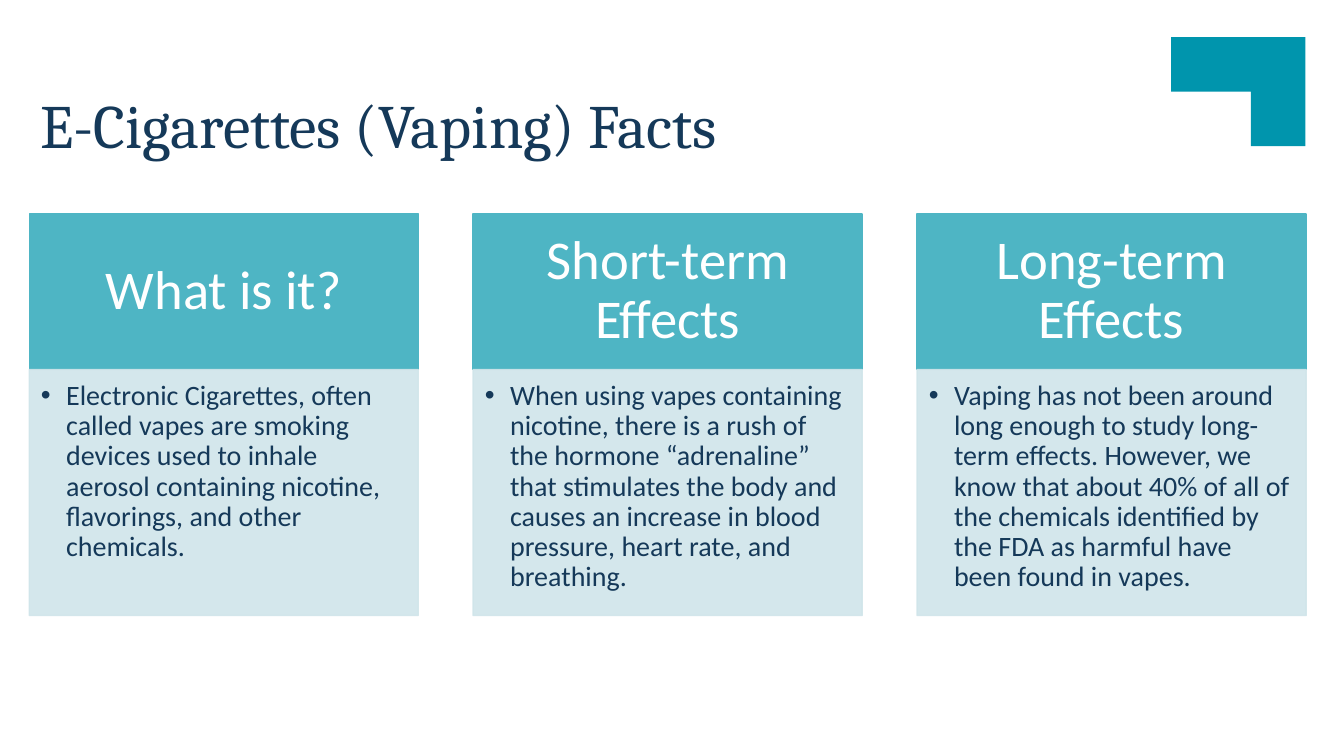
from dataclasses import dataclass

from lxml.etree import SubElement
from pptx import Presentation
from pptx.dml.color import RGBColor
from pptx.dml.fill import FillFormat
from pptx.enum.shapes import MSO_SHAPE
from pptx.enum.text import MSO_ANCHOR, PP_ALIGN
from pptx.oxml.ns import qn
from pptx.slide import Slide
from pptx.text.text import TextFrame, _Paragraph
from pptx.util import Pt

NAVY = RGBColor(0x15, 0x39, 0x59)
DEEP_TEAL = RGBColor(0x00, 0x95, 0xAD)
TEAL = RGBColor(0x4E, 0xB5, 0xC4)
PALE_TEAL = RGBColor(0xD0, 0xE5, 0xEA)
WHITE = RGBColor(0xFF, 0xFF, 0xFF)

COLUMN_LEFT, COLUMN_STEP, COLUMN_WIDTH = 20.9, 317.1, 277.9
HEADING_TOP, HEADING_HEIGHT = 152.8, 111.2
FACT_HEIGHT = 175.7
BULLET_INDENT = 18


@dataclass(frozen=True)
class Style:
    fill: RGBColor
    opacity: int
    font: str
    size: float
    color: RGBColor
    align: PP_ALIGN
    anchor: MSO_ANCHOR
    insets: tuple[float, float, float, float]
    bulleted: bool = False


@dataclass(frozen=True)
class Column:
    heading: str
    fact: str


HEADING = Style(TEAL, 100, "Calibri", 39, WHITE, PP_ALIGN.CENTER,
                MSO_ANCHOR.MIDDLE, (21.8, 12.5, 21.8, 12.5))
FACT = Style(PALE_TEAL, 90, "Calibri", 20, NAVY, PP_ALIGN.LEFT,
             MSO_ANCHOR.TOP, (8.4, 8.4, 11.2, 12.6), bulleted=True)

COLUMNS = (
    Column("What is it?",
           "Electronic Cigarettes, often called vapes are smoking devices used to "
           "inhale aerosol containing nicotine, flavorings, and other chemicals."),
    Column("Short-term Effects",
           "When using vapes containing nicotine, there is a rush of the hormone "
           "“adrenaline” that stimulates the body and causes an increase in blood "
           "pressure, heart rate, and breathing."),
    Column("Long-term Effects",
           "Vaping has not been around long enough to study long-term effects. "
           "However, we know that about 40% of all of the chemicals identified by "
           "the FDA as harmful have been found in vapes."),
)


def paint(fill: FillFormat, color: RGBColor, opacity: int) -> None:
    fill.solid()
    fill.fore_color.rgb = color
    if opacity < 100:
        color_element = fill._xPr.find(qn("a:solidFill"))[0]
        SubElement(color_element, qn("a:alpha"), val=str(opacity * 1000))


def add_bullet(paragraph: _Paragraph) -> None:
    properties = paragraph._p.get_or_add_pPr()
    properties.set("marL", str(Pt(BULLET_INDENT)))
    properties.set("indent", str(-Pt(BULLET_INDENT)))
    SubElement(properties, qn("a:buFont"), typeface="Arial")
    SubElement(properties, qn("a:buChar"), char="•")


def write(frame: TextFrame, text: str, font: str, size: float, color: RGBColor,
          align: PP_ALIGN, bulleted: bool = False) -> None:
    frame.word_wrap = True
    frame.text = text
    paragraph = frame.paragraphs[0]
    if bulleted:
        paragraph.level = 1
        add_bullet(paragraph)
    paragraph.alignment = align
    paragraph.line_spacing = 0.9
    for name, value in {"name": font, "size": Pt(size)}.items():
        setattr(paragraph.font, name, value)
    paragraph.font.color.rgb = color


def add_panel(slide: Slide, left: float, top: float, height: float,
              text: str, style: Style) -> None:
    panel = slide.shapes.add_shape(MSO_SHAPE.RECTANGLE, Pt(left), Pt(top),
                                   Pt(COLUMN_WIDTH), Pt(height))
    panel.shadow.inherit = False
    paint(panel.fill, style.fill, style.opacity)
    paint(panel.line.fill, style.fill, style.opacity)
    panel.line.width = Pt(1)
    frame = panel.text_frame
    write(frame, text, style.font, style.size, style.color, style.align, style.bulleted)
    frame.vertical_anchor = style.anchor
    for side, inset in zip(("left", "top", "right", "bottom"), style.insets):
        setattr(frame, f"margin_{side}", Pt(inset))


def add_corner(slide: Slide) -> None:
    corner = slide.shapes.add_shape(MSO_SHAPE.CORNER, Pt(836.6), Pt(26.6),
                                    Pt(95.8), Pt(77.8))
    corner.rotation = 180
    corner.shadow.inherit = False
    paint(corner.fill, DEEP_TEAL, 100)
    corner.line.fill.background()


def set_title(slide: Slide) -> None:
    title = slide.shapes.title
    bounds = {"left": 21.6, "top": 26.6, "width": 803.5, "height": 131}
    for name, value in bounds.items():
        setattr(title, name, Pt(value))
    write(title.text_frame, "E-Cigarettes (Vaping) Facts", "Cambria", 44, NAVY,
          PP_ALIGN.LEFT)
    title.text_frame.vertical_anchor = MSO_ANCHOR.MIDDLE


def main() -> None:
    deck = Presentation()
    deck.slide_width, deck.slide_height = Pt(960), Pt(540)
    slide = deck.slides.add_slide(deck.slide_layouts[5])
    add_corner(slide)
    set_title(slide)
    for index, column in enumerate(COLUMNS):
        left = COLUMN_LEFT + index * COLUMN_STEP
        add_panel(slide, left, HEADING_TOP, HEADING_HEIGHT, column.heading, HEADING)
        add_panel(slide, left, HEADING_TOP + HEADING_HEIGHT, FACT_HEIGHT,
                  column.fact, FACT)
    deck.save("out.pptx")


if __name__ == "__main__":
    main()
